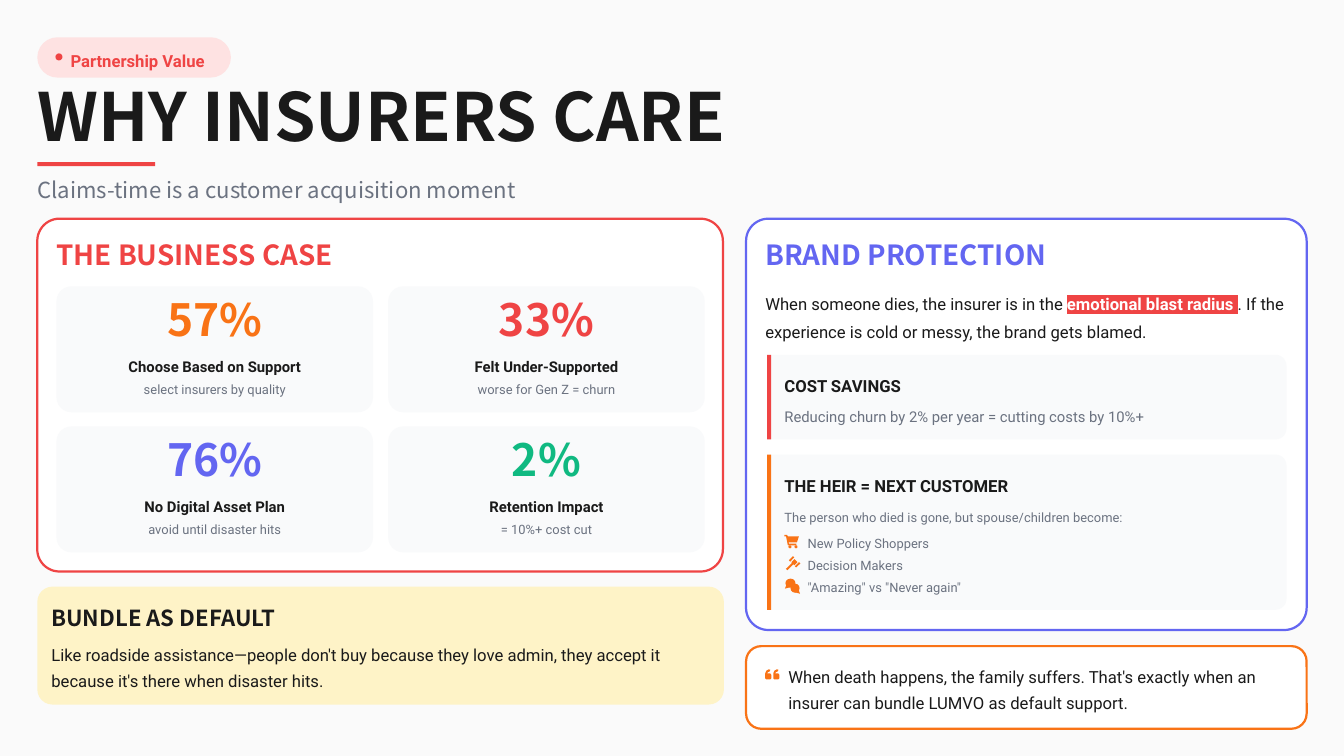
from lxml.etree import SubElement
from pptx import Presentation
from pptx.dml.color import RGBColor
from pptx.enum.shapes import MSO_SHAPE
from pptx.enum.text import MSO_ANCHOR, MSO_AUTO_SIZE, PP_ALIGN
from pptx.oxml.ns import qn
from pptx.util import Inches, Pt

RED = RGBColor(0xEF, 0x44, 0x44)
ORANGE = RGBColor(0xF9, 0x73, 0x16)
INDIGO = RGBColor(0x63, 0x66, 0xF1)
GREEN = RGBColor(0x10, 0xB9, 0x81)
INK = RGBColor(0x1A, 0x1A, 0x1A)
GRAY = RGBColor(0x6B, 0x72, 0x80)
WHITE = RGBColor(0xFF, 0xFF, 0xFF)
PAPER = RGBColor(0xFA, 0xFA, 0xFA)
CARD = RGBColor(0xF9, 0xFA, 0xFB)
PINK = RGBColor(0xFE, 0xE2, 0xE2)
YELLOW = RGBColor(0xFE, 0xF3, 0xC7)
HEADING = "Noto Sans CJK SC"
BODY = "Roboto"

STATS = [
    ("57%", "Choose Based on Support", "select insurers by quality", ORANGE),
    ("33%", "Felt Under-Supported", "worse for Gen Z = churn", RED),
    ("76%", "No Digital Asset Plan", "avoid until disaster hits", INDIGO),
    ("2%", "Retention Impact", "= 10%+ cost cut", GREEN),
]
HEIR_ROLES = ["New Policy Shoppers", "Decision Makers", '"Amazing" vs "Never again"']

CART = [
    (7.78, 5.305), (7.805, 5.305), (7.815, 5.32), (7.925, 5.32), (7.905, 5.38),
    (7.822, 5.38), (7.826, 5.393), (7.9, 5.393), (7.9, 5.41), (7.815, 5.41),
    (7.797, 5.322), (7.78, 5.322),
]
GAVEL = [
    [(7.825, 5.558), (7.865, 5.518), (7.878, 5.53), (7.837, 5.572)],
    [(7.848, 5.578), (7.88, 5.546), (7.91, 5.576), (7.88, 5.608), (7.868, 5.598),
     (7.81, 5.657), (7.795, 5.643), (7.858, 5.583)],
    [(7.885, 5.618), (7.925, 5.577), (7.938, 5.59), (7.897, 5.63)],
]
CHAT_TAILS = [
    [(7.8, 5.8), (7.785, 5.84), (7.84, 5.825)],
    [(7.92, 5.85), (7.935, 5.89), (7.88, 5.875)],
]
QUOTE_MARK = [
    (0, 0.04), (0.01, 0.015), (0.035, 0), (0.05, 0.005), (0.045, 0.02),
    (0.025, 0.03), (0.02, 0.04), (0.05, 0.042), (0.06, 0.055), (0.06, 0.09),
    (0.05, 0.1), (0.01, 0.1), (0, 0.09),
]


def paint(shape, fill, line=None):
    shape.shadow.inherit = False
    shape.fill.solid()
    shape.fill.fore_color.rgb = fill
    if line is None:
        shape.line.fill.background()
    else:
        shape.line.color.rgb = line
        shape.line.width = Pt(1.6)


def add_block(page, kind, left, top, width, height, fill):
    block = page.shapes.add_shape(
        kind, Inches(left), Inches(top), Inches(width), Inches(height))
    paint(block, fill)
    return block


def add_panel(page, left, top, width, height, radius, fill, line=None):
    panel = add_block(page, MSO_SHAPE.ROUNDED_RECTANGLE, left, top, width, height, fill)
    panel.adjustments[0] = radius / min(width, height)
    paint(panel, fill, line)


def add_barred_card(page, top, height, color):
    left, width = 7.61, 5.15
    card = add_block(page, MSO_SHAPE.ROUND_2_SAME_RECTANGLE,
                     left + (width - height) / 2, top + (height - width) / 2,
                     height, width, CARD)
    card.rotation = 90
    card.adjustments[0] = 0.11 / height
    add_block(page, MSO_SHAPE.RECTANGLE, left, top, 0.04, height, color)


def add_outline(page, contours, color):
    builder = None
    for points in contours:
        start, *others = [(round(x * 1000), round(y * 1000)) for x, y in points]
        if builder is None:
            builder = page.shapes.build_freeform(*start, scale=Inches(1) / 1000)
        else:
            builder.move_to(*start)
        builder.add_line_segments(others, close=True)
    paint(builder.convert_to_shape(), color)


def set_font(font, size, color, name, bold):
    font.size = Pt(size)
    font.bold = bold
    font.color.rgb = color
    font.name = name


def prepare_frame(frame):
    frame.margin_left = frame.margin_right = frame.margin_top = frame.margin_bottom = 0
    frame.vertical_anchor = MSO_ANCHOR.MIDDLE
    frame.auto_size = MSO_AUTO_SIZE.NONE
    frame.word_wrap = True


def add_text(page, left, top, width, height, text, size, color,
             name=BODY, bold=False, spacing=1.3, align=PP_ALIGN.LEFT):
    box = page.shapes.add_textbox(
        Inches(left), Inches(top), Inches(width), Inches(height))
    prepare_frame(box.text_frame)
    para = box.text_frame.paragraphs[0]
    para.text = text
    para.alignment = align
    para.line_spacing = spacing
    set_font(para.font, size, color, name, bold)
    return para


def add_title(page):
    title = page.shapes.title
    title.left, title.top = Inches(0.37), Inches(0.88)
    title.width, title.height = Inches(12.93), Inches(0.66)
    prepare_frame(title.text_frame)
    para = title.text_frame.paragraphs[0]
    para.text = "WHY INSURERS CARE"
    para.alignment = PP_ALIGN.LEFT
    para.line_spacing = 0.8
    set_font(para.font, 47.5, INK, HEADING, True)


def add_header(page):
    add_panel(page, 0.37, 0.37, 1.92, 0.4, 0.2, PINK)
    add_block(page, MSO_SHAPE.OVAL, 0.55, 0.53, 0.07, 0.07, RED)
    add_text(page, 0.7, 0.44, 1.49, 0.26, "Partnership Value", 11.9, RED, bold=True)
    add_title(page)
    add_block(page, MSO_SHAPE.RECTANGLE, 0.37, 1.61, 1.17, 0.04, RED)
    add_text(page, 0.37, 1.72, 12.71, 0.29, "Claims-time is a customer acquisition moment",
             15.8, GRAY, HEADING, spacing=1.1)


def add_stat(page, left, top, value, label, detail, color):
    add_panel(page, left, top, 3.14, 1.25, 0.15, CARD)
    rows = [
        (0.15, 0.44, value, 31.7, color, HEADING, True, 0.8),
        (0.66, 0.22, label, 10.6, INK, BODY, True, 1.3),
        (0.92, 0.18, detail, 9.2, GRAY, BODY, False, 1.2),
    ]
    for offset, height, *style in rows:
        add_text(page, left + 0.04, top + offset, 3.06, height, *style, PP_ALIGN.CENTER)


def add_business_case(page):
    add_panel(page, 0.37, 2.17, 6.8, 3.5, 0.22, WHITE, RED)
    add_text(page, 0.56, 2.36, 6.55, 0.33, "THE BUSINESS CASE", 19.8, RED,
             HEADING, True, 1)
    for index, stat in enumerate(STATS):
        row, column = divmod(index, 2)
        add_stat(page, 0.56 + 3.29 * column, 2.84 + 1.39 * row, *stat)


def add_bundle(page):
    add_panel(page, 0.37, 5.82, 6.81, 1.17, 0.15, YELLOW)
    add_text(page, 0.51, 5.97, 6.63, 0.29, "BUNDLE AS DEFAULT", 15.8, INK,
             HEADING, True, 1.1)
    add_text(page, 0.51, 6.34, 6.6, 0.51,
             "Like roadside assistance—people don't buy because they love admin, "
             "they accept it because it's there when disaster hits.", 11.9, INK)


def add_highlighted_span(para, text):
    span = para.add_run()
    span.text = text
    set_font(span.font, 11.9, WHITE, BODY, True)
    properties = span.font.fill._xPr
    highlight = SubElement(properties, qn("a:highlight"))
    SubElement(highlight, qn("a:srgbClr"), val=str(RED))
    properties.find(qn("a:solidFill")).addnext(highlight)


def add_brand_protection(page):
    add_panel(page, 7.4, 2.17, 5.56, 4.08, 0.22, WHITE, INDIGO)
    add_text(page, 7.59, 2.36, 5.31, 0.33, "BRAND PROTECTION", 19.8, INDIGO,
             HEADING, True, 1)
    para = add_text(page, 7.59, 2.84, 5.25, 0.54,
                    "When someone dies, the insurer is in the ", 11.9, INK, spacing=1.4)
    add_highlighted_span(para, "emotional blast radius ")
    para.add_run().text = ". If the experience is cold or messy, the brand gets blamed."
    add_barred_card(page, 3.52, 0.84, RED)
    add_text(page, 7.78, 3.67, 4.92, 0.26, "COST SAVINGS", 11.9, INK, bold=True)
    add_text(page, 7.78, 4, 4.92, 0.22,
             "Reducing churn by 2% per year = cutting costs by 10%+", 10.6, GRAY)
    add_barred_card(page, 4.51, 1.54, ORANGE)
    add_text(page, 7.78, 4.66, 4.92, 0.26, "THE HEIR = NEXT CUSTOMER", 11.9, INK, bold=True)
    add_text(page, 7.78, 5.03, 4.91, 0.18,
             "The person who died is gone, but spouse/children become:",
             9.2, GRAY, spacing=1.2)
    for index, role in enumerate(HEIR_ROLES):
        add_text(page, 8.01, 5.28 + 0.22 * index, 1.8, 0.18, role, 9.2, GRAY, spacing=1.2)
    add_role_icons(page)


def add_role_icons(page):
    add_outline(page, [CART], ORANGE)
    for left in (7.82, 7.88):
        add_block(page, MSO_SHAPE.OVAL, left, 5.41, 0.03, 0.03, ORANGE)
    add_outline(page, GAVEL, ORANGE)
    add_block(page, MSO_SHAPE.OVAL, 7.84, 5.79, 0.09, 0.09, ORANGE)
    add_block(page, MSO_SHAPE.OVAL, 7.79, 5.74, 0.1, 0.09, ORANGE)
    add_outline(page, CHAT_TAILS, ORANGE)


def add_quote(page):
    add_panel(page, 7.4, 6.41, 5.56, 0.82, 0.15, WHITE, ORANGE)
    marks = [[(left + x, 6.64 + y) for x, y in QUOTE_MARK] for left in (7.59, 7.67)]
    add_outline(page, marks, ORANGE)
    add_text(page, 7.82, 6.56, 5.07, 0.51,
             "When death happens, the family suffers. That's exactly when an "
             "insurer can bundle LUMVO as default support.", 11.9, INK)


def main():
    deck = Presentation()
    deck.slide_width, deck.slide_height = Inches(13.33), Inches(7.5)
    page = deck.slides.add_slide(deck.slide_layouts[5])
    page.background.fill.solid()
    page.background.fill.fore_color.rgb = PAPER
    add_header(page)
    add_business_case(page)
    add_bundle(page)
    add_brand_protection(page)
    add_quote(page)
    deck.save("out.pptx")


if __name__ == "__main__":
    main()
